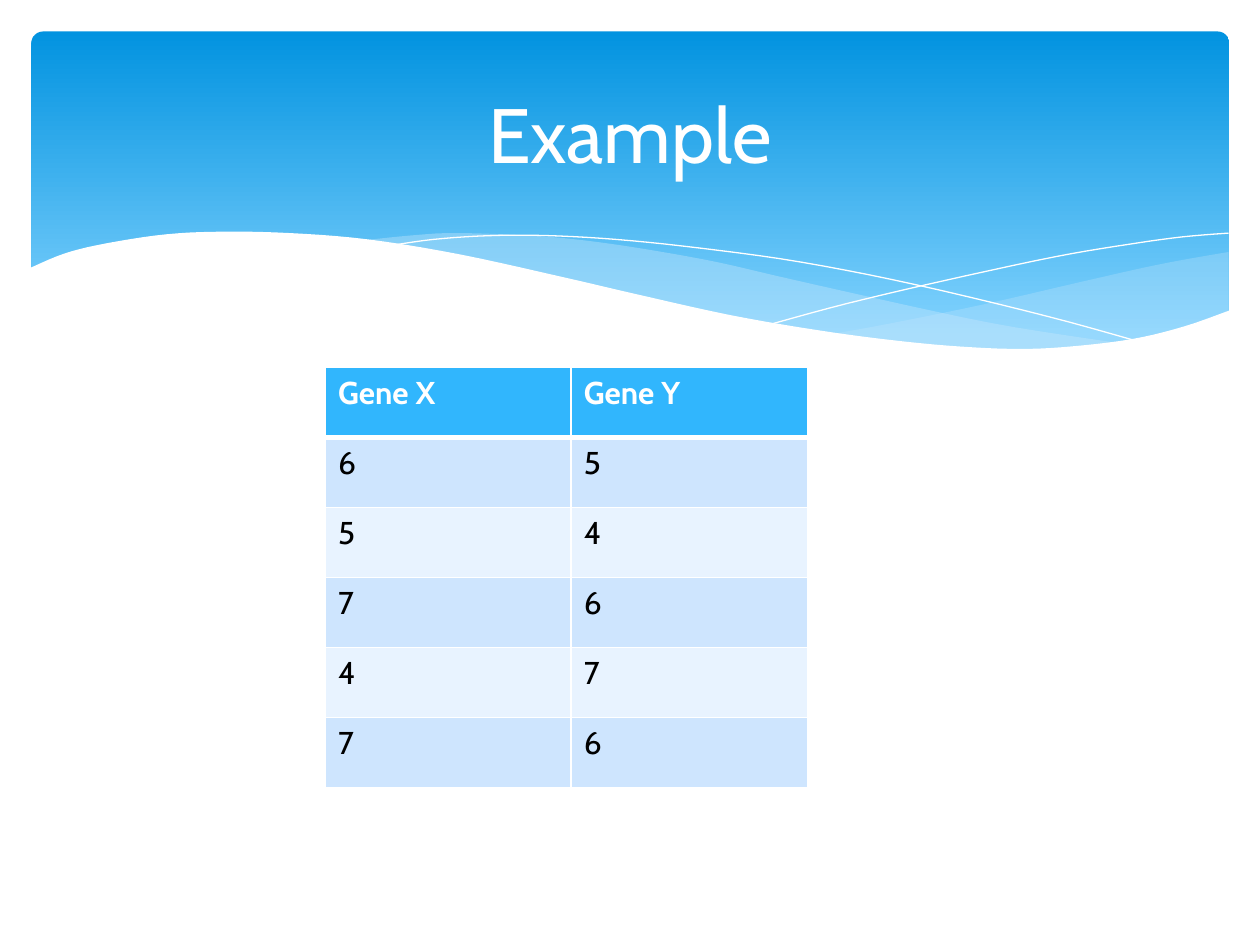
from lxml.etree import SubElement
from pptx import Presentation
from pptx.dml.color import RGBColor
from pptx.enum.shapes import MSO_SHAPE as Preset
from pptx.enum.text import MSO_ANCHOR as Anchor, PP_ALIGN as Align
from pptx.oxml.ns import qn
from pptx.util import Pt

# Content
TITLE = "Example"
GENES = [("Gene X", "Gene Y"), ("6", "5"), ("5", "4"), ("7", "6"), ("4", "7"), ("7", "6")]
FONT = "Cabin"
WHITE, BLACK, VEIL = "FFFFFF", "000000", "C6E7FC"
HEADER, BANDS = "31B6FD", ("CEE5FE", "E8F3FF")
BANNER_TOP, BANNER_BOTTOM = "0293E0", "83D3FE"

# Banner curves, as knots in points
RIGHT_VEIL = [
    [(702, 144), (663, 151), (620, 160.6), (561, 174.2), (508, 185), (476, 190.8)],
    [(476, 190.8), (508, 195), (545, 198.7), (586, 200), (621, 198), (652, 193.7),
     (678, 186.5), (702, 178)],
]
LEFT_VEIL = [
    [(643, 196.6), (581, 187.2), (533.5, 177.8), (453, 159.8), (409.7, 149.8), (370, 142.6),
     (334.8, 137.5), (302.4, 134.6), (260, 133.2), (236, 134.5), (206, 137.5)],
    [(206, 137.5), (246.2, 143.3), (291, 152), (323.3, 159.8), (381.6, 172.8), (432.7, 183.6),
     (478.8, 191.5), (519.8, 197.3), (565.2, 200), (603.4, 200), (643, 196.6)],
]
FALLING_LINE = [
    [(222.5, 140.4), (247.7, 136.8), (278.6, 134.7), (311.8, 134.6), (352, 136.8),
     (400.3, 141.8), (458, 149.8), (523.4, 162.7), (598.3, 180.7), (653, 195.8)],
]
RISING_LINE = [
    [(441.4, 185), (483.8, 173.5), (538.6, 160.6), (602, 146.9), (644.4, 139.7),
     (675.4, 135.4), (702, 133.2)],
]
WAVE = [
    [(703.4, 177.1), (676.8, 186.5), (647.3, 193.7), (612, 198), (582.5, 199.4), (548, 198),
     (509.8, 194.4), (466.6, 188.6), (416.9, 180), (362.2, 167.8), (321.8, 158.4),
     (262.8, 145.4), (210.2, 136.8), (165.6, 133.2), (127.4, 132.4), (95, 133.9),
     (61.2, 139), (37.4, 144.7), (16.6, 153.4)],
    [(16.6, 236.9), (703.4, 236.9)],
]


def color(value):
    return RGBColor.from_string(value)


def smooth(knots, steps=5):
    """Catmull-Rom curve through the knots."""
    ends = [knots[0], *knots, knots[-1]]
    curve = [knots[0]]
    for a, b, c, d in zip(ends, ends[1:], ends[2:], ends[3:]):
        for step in range(1, steps + 1):
            t = step / steps
            curve.append(tuple(
                q + t * (r - p) / 2 + t**2 * (2 * p - 5 * q + 4 * r - s) / 2
                + t**3 * (3 * q - p - 3 * r + s) / 2
                for p, q, r, s in zip(a, b, c, d)))
    return curve


def add_curve(edges, fill=None, opacity=100):
    """Filled outline, or a white hairline when there is no fill."""
    start, *rest = [(Pt(x), Pt(y)) for edge in edges for x, y in smooth(edge)]
    builder = slide.shapes.build_freeform(*start)
    builder.add_line_segments(rest, close=fill is not None)
    curve = builder.convert_to_shape()
    curve.shadow.inherit = False
    if fill is None:
        curve.fill.background()
        curve.line.color.rgb = color(WHITE)
        curve.line.width = Pt(0)
        return
    curve.line.fill.background()
    curve.fill.solid()
    curve.fill.fore_color.rgb = color(fill)
    if opacity < 100:
        tone = next(curve.element.spPr.iter(qn("a:srgbClr")))
        SubElement(tone, qn("a:alpha"), val=str(opacity * 1000))


def style_run(run, size, tone, bold=False):
    run.font.name, run.font.size, run.font.bold = FONT, Pt(size), bold
    run.font.color.rgb = color(tone)


def set_borders(cell, widths):
    for side, width in widths.items():
        border = SubElement(cell._tc.get_or_add_tcPr(), qn("a:ln" + side), w=str(Pt(width)))
        SubElement(SubElement(border, qn("a:solidFill")), qn("a:srgbClr"), val=WHITE)


deck = Presentation()
deck.slide_width, deck.slide_height = Pt(720), Pt(540)
slide = deck.slides.add_slide(deck.slide_layouts[5])

# Banner
banner = slide.shapes.add_shape(Preset.ROUNDED_RECTANGLE, Pt(18), Pt(18), Pt(684.5), Pt(194.5))
banner.adjustments[0] = 0.034
banner.shadow.inherit = False
banner.line.fill.background()
banner.fill.gradient()
banner.fill.gradient_angle = 270
for stop, position, tone in zip(banner.fill.gradient_stops, (0, 0.9),
                                (BANNER_TOP, BANNER_BOTTOM)):
    stop.position = position
    stop.color.rgb = color(tone)
add_curve(RIGHT_VEIL, VEIL, 29)
add_curve(LEFT_VEIL, VEIL, 40)
add_curve(FALLING_LINE)
add_curve(RISING_LINE)
add_curve(WAVE, WHITE)

# Gene table
column_widths, row_height = (140.4, 135.4), 40
genes = slide.shapes.add_table(len(GENES), len(column_widths), Pt(186), Pt(210),
                               Pt(sum(column_widths)), Pt(row_height * len(GENES))).table
for column, width in zip(genes.columns, column_widths):
    column.width = Pt(width)
for r, values in enumerate(GENES):
    header = r == 0
    genes.rows[r].height = Pt(row_height)
    for c, value in enumerate(values):
        cell = genes.cell(r, c)
        cell.text = value
        style_run(cell.text_frame.paragraphs[0].runs[0], 18, WHITE if header else BLACK, header)
        set_borders(cell, {"L": 1, "R": 1, "T": 3 if r == 1 else 1, "B": 3 if header else 1})
        cell.fill.solid()
        cell.fill.fore_color.rgb = color(HEADER if header else BANDS[(r - 1) % 2])

# Title, brought in front of the banner
title = slide.shapes.title
slide.shapes.element.append(title.element)
title.left, title.top, title.width, title.height = Pt(36), Pt(26.6), Pt(648), Pt(98.6)
title.text_frame.text = TITLE
title.text_frame.vertical_anchor = Anchor.MIDDLE
heading = title.text_frame.paragraphs[0]
heading.alignment = Align.CENTER
style_run(heading.runs[0], 44, WHITE)

deck.save("out.pptx")
